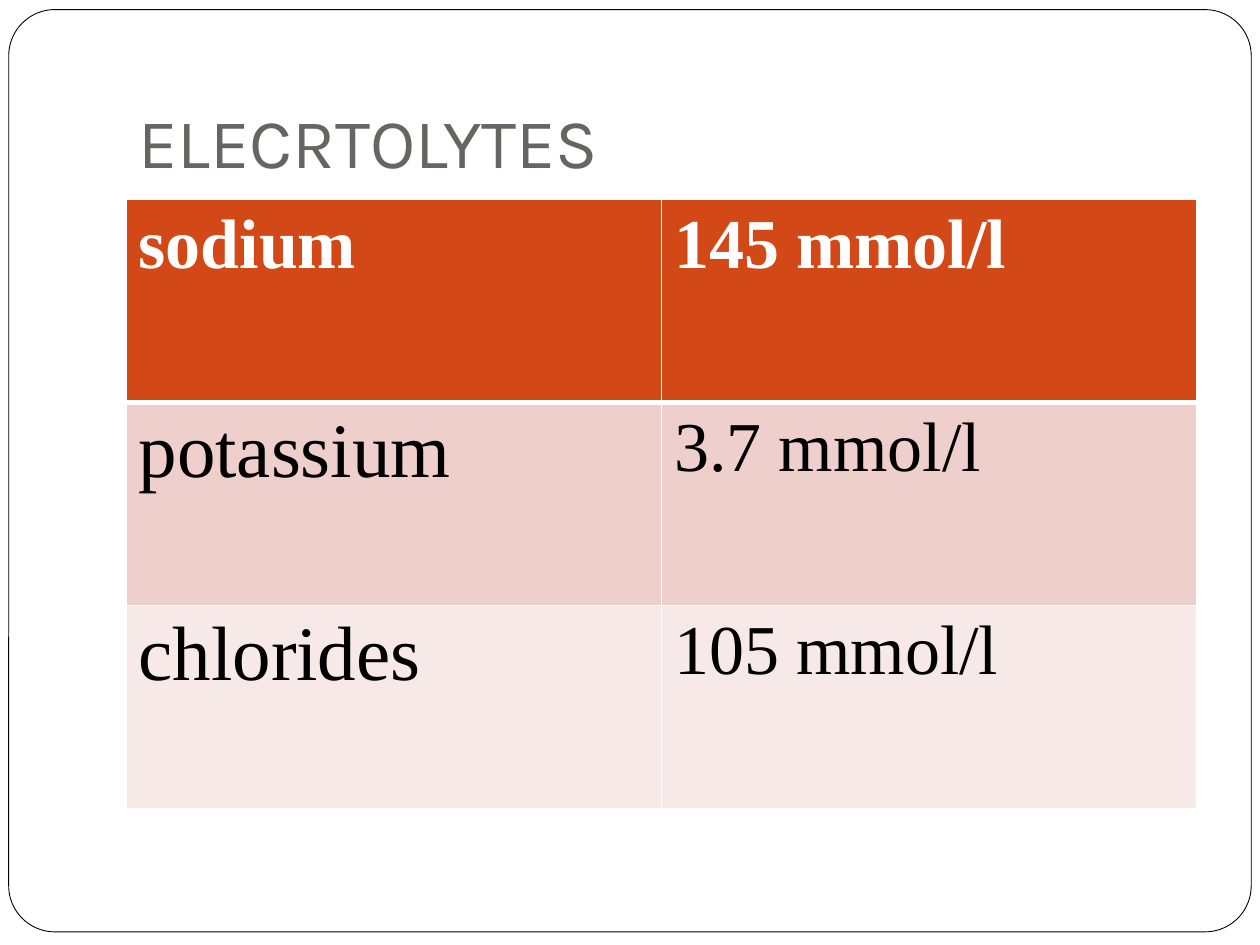
from dataclasses import dataclass

from lxml import etree
from pptx import Presentation
from pptx import util as u
from pptx.dml.color import RGBColor
from pptx.enum import shapes, text
from pptx.oxml.ns import qn


@dataclass(frozen=True)
class Theme:
    paper: str = "FFFFFF"
    ink: str = "000000"
    title: str = "696464"
    header: str = "D34817"
    bands: tuple = ("EFCFCC", "F7E9E8")
    title_font: str = "Karla"
    body_font: str = "Times New Roman"
    size: int = 40
    large: int = 44


class SlideBuilder:
    def __init__(self, s, theme):
        self.s = s
        self.theme = theme

    def style(self, p, font, size, color, bold=False):
        p.font.name = font
        p.font.size = u.Pt(size)
        p.font.bold = bold
        p.font.color.rgb = RGBColor.from_string(color)

    def frame(self, *box):
        sp = self.s.shapes.add_shape(
            shapes.MSO_SHAPE.ROUNDED_RECTANGLE, *map(u.Pt, box))
        sp.adjustments[0] = 0.05
        sp.shadow.inherit = False
        sp.fill.solid()
        sp.fill.fore_color.rgb = RGBColor.from_string(self.theme.paper)
        sp.line.color.rgb = RGBColor.from_string(self.theme.ink)
        sp.line.width = u.Pt(0.5)

    def title(self, words, *box):
        tf = self.s.shapes.add_textbox(*map(u.Pt, box)).text_frame
        tf.word_wrap = True
        tf.vertical_anchor = text.MSO_ANCHOR.BOTTOM
        tf.margin_bottom = u.Pt(7.2)
        p = tf.paragraphs[0]
        p.text = words
        self.style(p, self.theme.title_font, self.theme.size, self.theme.title)

    def borders(self, cell, widths):
        tcPr = cell._tc.get_or_add_tcPr()
        for i, (side, width) in enumerate(widths.items()):
            ln = etree.Element(qn(f"a:ln{side}"), w=str(u.Pt(width)))
            fill = etree.SubElement(ln, qn("a:solidFill"))
            etree.SubElement(fill, qn("a:srgbClr"), val=self.theme.paper)
            tcPr.insert(i, ln)

    def table(self, rows, *box):
        t = self.theme
        table = self.s.shapes.add_table(
            len(rows), len(rows[0]), *map(u.Pt, box)).table
        for i, row in enumerate(rows):
            header = i == 0
            for j, words in enumerate(row):
                cell = table.cell(i, j)
                cell.fill.solid()
                fill = t.header if header else t.bands[(i - 1) % 2]
                cell.fill.fore_color.rgb = RGBColor.from_string(fill)
                p = cell.text_frame.paragraphs[0]
                p.text = words
                size = t.large if j == 0 and not header else t.size
                color = t.paper if header else t.ink
                self.style(p, t.body_font, size, color, header)
                self.borders(cell, {"L": 1, "R": 1,
                                    "T": 3 if i == 1 else 1,
                                    "B": 3 if header else 1})


def main():
    prs = Presentation()
    prs.slide_width, prs.slide_height = u.Pt(720), u.Pt(540)
    s = prs.slides.add_slide(prs.slide_layouts[6])
    b = SlideBuilder(s, Theme())
    b.frame(5, 5.5, 710, 527)
    b.title("ELECRTOLYTES", 72, 21.6, 612, 90)
    b.table([("sodium", "145 mmol/l"),
             ("potassium", "3.7 mmol/l"),
             ("chlorides", "105 mmol/l")], 72, 114, 612, 348)
    prs.save("out.pptx")


if __name__ == "__main__":
    main()
